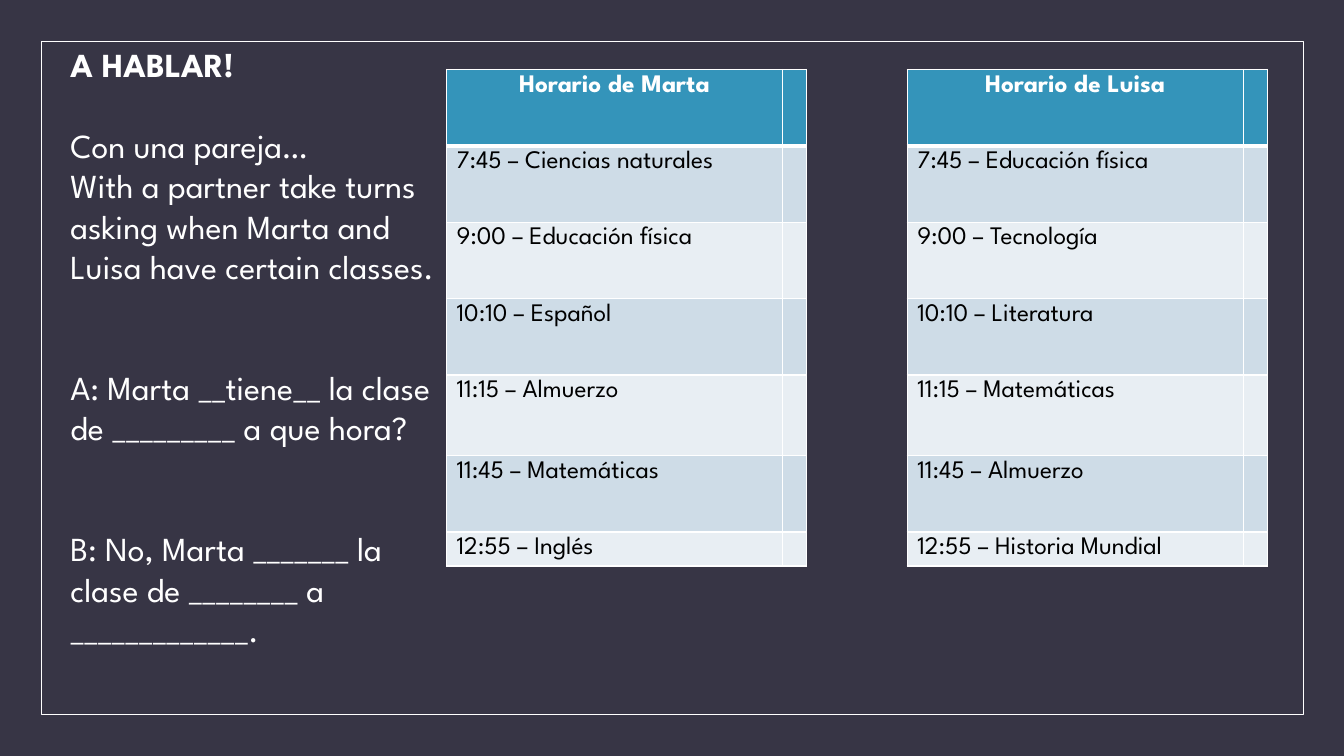
import pptx
import pptx.dml.color
import pptx.enum.shapes
import pptx.enum.text
import pptx.oxml
import pptx.oxml.ns
import pptx.util

COLORS = {
    "background": "373545",
    "white": "FFFFFF",
    "black": "000000",
    "header": "3494BA",
    "odd": "CEDCE7",
    "even": "E8EEF3",
}
FONT = "League Spartan"
BODY_SIZE, TABLE_SIZE = 24, 18
BLANK_LINE = 28.8
ROW_HEIGHTS = [10.1, 10.1, 10.1, 10.1, 10.67, 10.1, 4.5]
COLUMN_WIDTHS = [25, 1.75]

# Text, and the number of line heights left free above it
INSTRUCTIONS = [
    ("A HABLAR!", 0),
    ("Con una pareja…", 1),
    ("With a partner take turns asking when Marta and Luisa have certain classes.", 0),
    ("A: Marta __tiene__ la clase de _________ a que hora?", 2),
    ("B: No, Marta _______ la clase de ________ a _____________.", 2),
]
TIMES = ["7:45", "9:00", "10:10", "11:15", "11:45", "12:55"]
SCHEDULES = [
    (33.22, "Horario de Marta", ["Ciencias naturales", "Educación física", "Español",
                                 "Almuerzo", "Matemáticas", "Inglés"]),
    (67.5, "Horario de Luisa", ["Educación física", "Tecnología", "Literatura",
                                "Matemáticas", "Almuerzo", "Historia Mundial"]),
]


def rgb(name):
    return pptx.dml.color.RGBColor.from_string(COLORS[name])


class SlideBuilder:
    """Draws on one slide; lengths are percentages of its width and height."""

    def __init__(self, presentation):
        self.width = presentation.slide_width
        self.height = presentation.slide_height
        self.slide = presentation.slides.add_slide(presentation.slide_layouts[6])
        fill = self.slide.background.fill
        fill.solid()
        fill.fore_color.rgb = rgb("background")

    def x(self, share):
        return round(self.width * share / 100)

    def y(self, share):
        return round(self.height * share / 100)

    def box(self, left, top, width, height):
        return self.x(left), self.y(top), self.x(width), self.y(height)

    def format_runs(self, paragraph, size, color, bold):
        for run in paragraph.runs:
            run.font.name = FONT
            run.font.size = pptx.util.Pt(size)
            run.font.bold = bold
            run.font.color.rgb = rgb(color)

    def frame(self, *area):
        shape = self.slide.shapes.add_shape(
            pptx.enum.shapes.MSO_SHAPE.RECTANGLE, *self.box(*area))
        shape.shadow.inherit = False
        shape.fill.background()
        shape.line.color.rgb = rgb("white")
        shape.line.width = pptx.util.Pt(0.5)

    def text(self, paragraphs, *area):
        text_frame = self.slide.shapes.add_textbox(*self.box(*area)).text_frame
        text_frame.word_wrap = True
        text_frame.text = "\n".join(text for text, _ in paragraphs)
        for index, paragraph in enumerate(text_frame.paragraphs):
            paragraph.space_before = pptx.util.Pt(BLANK_LINE * paragraphs[index][1])
            self.format_runs(paragraph, BODY_SIZE, "white", index == 0)

    def border(self, cell, row):
        """Add white borders, thicker between the header and the first class."""
        properties = cell._tc.get_or_add_tcPr()
        thick_side = {0: "B", 1: "T"}.get(row)
        for position, side in enumerate("LRTB"):
            width = pptx.util.Pt(3 if side == thick_side else 1)
            properties.insert(position, pptx.oxml.parse_xml(
                f'<a:ln{side} {pptx.oxml.ns.nsdecls("a")} w="{width}"><a:solidFill>'
                f'<a:srgbClr val="{COLORS["white"]}"/></a:solidFill></a:ln{side}>'))

    def schedule(self, left, top, title, classes):
        lines = [title] + [f"{time} – {name}" for time, name in zip(TIMES, classes)]
        area = self.box(left, top, sum(COLUMN_WIDTHS), sum(ROW_HEIGHTS))
        table = self.slide.shapes.add_table(len(lines), len(COLUMN_WIDTHS), *area).table
        for column, width in zip(table.columns, COLUMN_WIDTHS):
            column.width = self.x(width)
        for row, (line, height) in enumerate(zip(lines, ROW_HEIGHTS)):
            table.rows[row].height = self.y(height)
            table.cell(row, 0).text_frame.text = line
            for cell in table.rows[row].cells:
                self.style_cell(cell, row)

    def style_cell(self, cell, row):
        is_header = row == 0
        cell.margin_left = cell.margin_right = pptx.util.Inches(0.1)
        cell.margin_top = pptx.util.Inches(0.05)
        cell.margin_bottom = 0
        cell.fill.solid()
        cell.fill.fore_color.rgb = rgb(
            "header" if is_header else "odd" if row % 2 else "even")
        self.border(cell, row)
        paragraph = cell.text_frame.paragraphs[0]
        if is_header:
            paragraph.alignment = pptx.enum.text.PP_ALIGN.CENTER
        self.format_runs(paragraph, TABLE_SIZE, "white" if is_header else "black", is_header)
        if not paragraph.runs:
            # Keeps an empty cell from stretching its row
            paragraph._p.append(pptx.oxml.parse_xml(
                f'<a:endParaRPr {pptx.oxml.ns.nsdecls("a")} sz="{TABLE_SIZE * 100}">'
                f'<a:latin typeface="{FONT}"/></a:endParaRPr>'))


def main():
    presentation = pptx.Presentation()
    presentation.slide_width = pptx.util.Inches(13.33)
    presentation.slide_height = pptx.util.Inches(7.5)
    builder = SlideBuilder(presentation)
    builder.frame(3.08, 5.47, 93.92, 89.07)
    for left, title, classes in SCHEDULES:
        builder.schedule(left, 9.2, title, classes)
    builder.text(INSTRUCTIONS, 4.5, 5.2, 28.73, 92.93)
    presentation.save("out.pptx")


if __name__ == "__main__":
    main()
